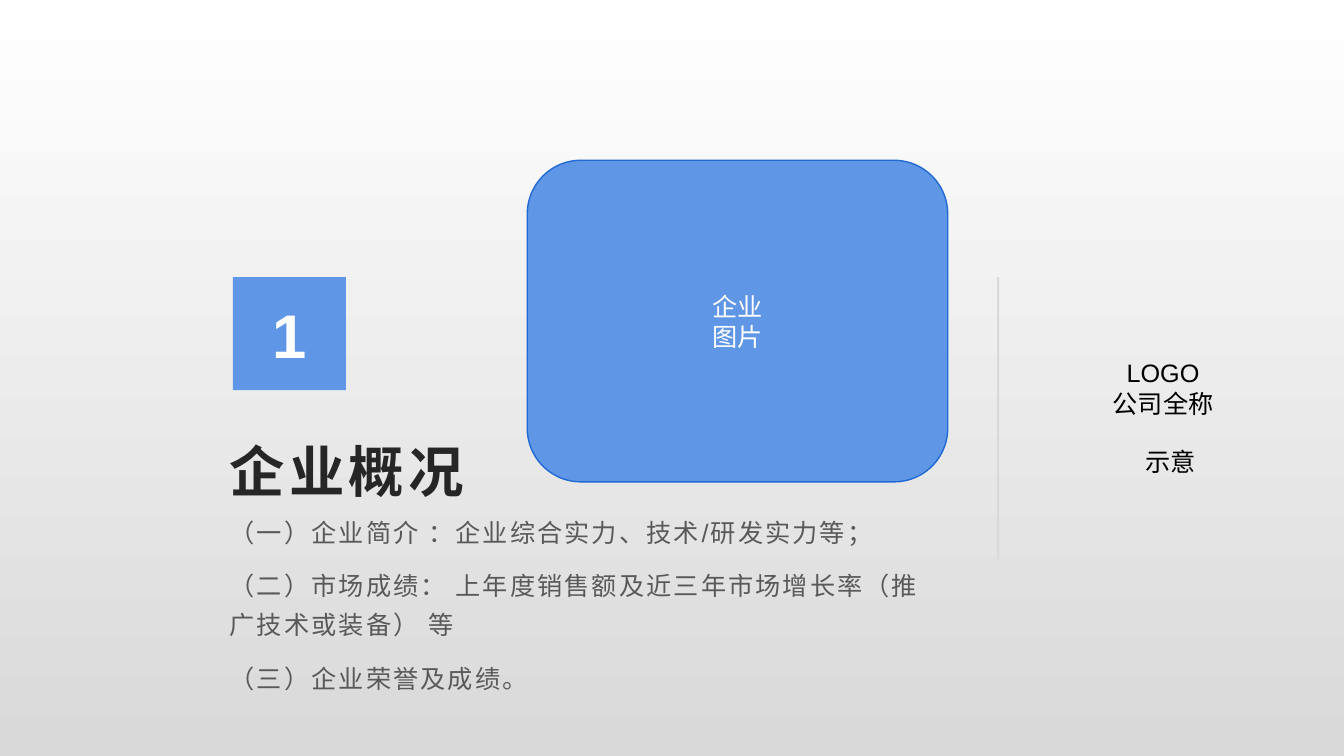
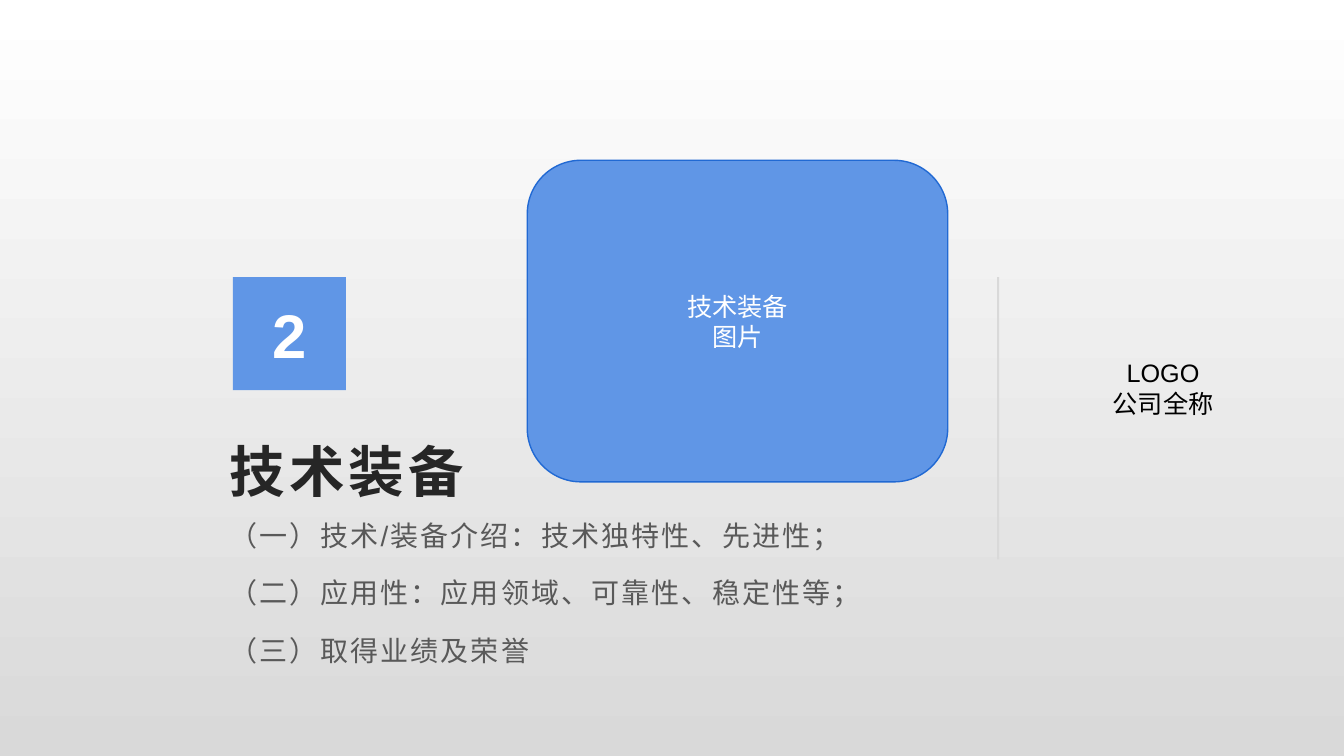
from pptx import Presentation
from pptx.dml.color import RGBColor
from pptx.enum.shapes import MSO_SHAPE
from pptx.enum.text import MSO_ANCHOR, PP_ALIGN
from pptx.util import Inches, Pt

# Content
SECTIONS = [
    {
        "title": "企业概况",
        "points": [
            "（一）企业简介 ：企业综合实力、技术/研发实力等；",
            "（二）市场成绩： 上年度销售额及近三年市场增长率（推广技术或装备） 等",
            "（三）企业荣誉及成绩。",
        ],
        "point_size": 18,
        "photo": ["企业", "图片"],
        "logo_note": "示意",
    },
    {
        "title": "技术装备",
        "points": [
            "（一）技术/装备介绍：技术独特性、先进性；",
            "（二）应用性：应用领域、可靠性、稳定性等；",
            "（三）取得业绩及荣誉",
        ],
        "point_size": 20,
        "photo": ["技术装备", "图片"],
        "logo_note": None,
    },
]
LOGO_LINES = ["LOGO", "公司全称"]

# Shared style
FONT = "Arial"
WHITE = RGBColor(0xFF, 0xFF, 0xFF)
BLACK = RGBColor(0x00, 0x00, 0x00)
LIGHT_GREY = RGBColor(0xD9, 0xD9, 0xD9)
BODY_GREY = RGBColor(0x59, 0x59, 0x59)
TITLE_GREY = RGBColor(0x26, 0x26, 0x26)
BLUE = RGBColor(0x60, 0x96, 0xE6)
DARK_BLUE = RGBColor(0x21, 0x69, 0xD3)

# Shared places: left, top, width, height in inches
LOGO = (10.09, 3.5, 2.89, 0.71)
LOGO_NOTE = (11.26, 4.38, 0.72, 0.4)
TITLE = (2.18, 4.21, 7.23, 0.84)
POINTS = (2.18, 4.99, 7.23, 1.01)
NUMBER = (2.31, 2.75, 1.12, 1.12)
DIVIDER = (9.89, 2.75, 0.02, 2.8)
PHOTO = (5.23, 1.59, 4.17, 3.19)


def write(shape, lines, size, color, bold=False, align=PP_ALIGN.LEFT,
          anchor=MSO_ANCHOR.TOP, tracking=0, line_spacing=None, space_after=None):
    frame = shape.text_frame
    frame.word_wrap = True
    frame.vertical_anchor = anchor
    for index, line in enumerate(lines):
        para = frame.add_paragraph() if index else frame.paragraphs[0]
        para.alignment = align
        para.line_spacing = line_spacing
        para.space_after = space_after
        para.font.name = FONT
        para.font.size = Pt(size)
        para.font.bold = bold
        para.font.color.rgb = color
        span = para.add_run()
        span.text = line
        if tracking:
            span._r.get_or_add_rPr().set("spc", str(int(tracking * 100)))


def add_text(page, place, lines, size, color, **style):
    box = page.shapes.add_textbox(*map(Inches, place))
    write(box, lines, size, color, **style)


def add_block(page, kind, place, fill, line=None):
    block = page.shapes.add_shape(kind, *map(Inches, place))
    block.shadow.inherit = False
    block.fill.solid()
    block.fill.fore_color.rgb = fill
    if line is None:
        block.line.fill.background()
    else:
        block.line.color.rgb = line
        block.line.width = Pt(1)
    return block


def paint_background(page):
    fill = page.background.fill
    fill.gradient()
    fill.gradient_angle = 270
    for stop, color in zip(fill.gradient_stops, (WHITE, LIGHT_GREY)):
        stop.color.rgb = color


def add_section(deck, number, section):
    page = deck.slides.add_slide(deck.slide_layouts[6])
    paint_background(page)
    centred = {"align": PP_ALIGN.CENTER, "anchor": MSO_ANCHOR.MIDDLE}

    # Company mark
    add_text(page, LOGO, LOGO_LINES, 18, BLACK, align=PP_ALIGN.CENTER)

    # Title and points
    add_text(page, TITLE, [section["title"]], 39.6, TITLE_GREY, bold=True,
             anchor=MSO_ANCHOR.BOTTOM, tracking=3)
    add_text(page, POINTS, section["points"], section["point_size"], BODY_GREY,
             tracking=1.5, line_spacing=1.3, space_after=Pt(10))

    # Number tile, divider and photo panel
    tile = add_block(page, MSO_SHAPE.RECTANGLE, NUMBER, BLUE)
    write(tile, [str(number)], 44, WHITE, bold=True, **centred)
    add_block(page, MSO_SHAPE.RECTANGLE, DIVIDER, LIGHT_GREY)
    photo = add_block(page, MSO_SHAPE.ROUNDED_RECTANGLE, PHOTO, BLUE, DARK_BLUE)
    write(photo, section["photo"], 18, WHITE, **centred)

    if section["logo_note"]:
        add_text(page, LOGO_NOTE, [section["logo_note"]], 18, BLACK)


def main():
    deck = Presentation()
    deck.slide_width, deck.slide_height = Inches(13.33), Inches(7.5)
    for number, section in enumerate(SECTIONS, start=1):
        add_section(deck, number, section)
    deck.save("out.pptx")


if __name__ == "__main__":
    main()
